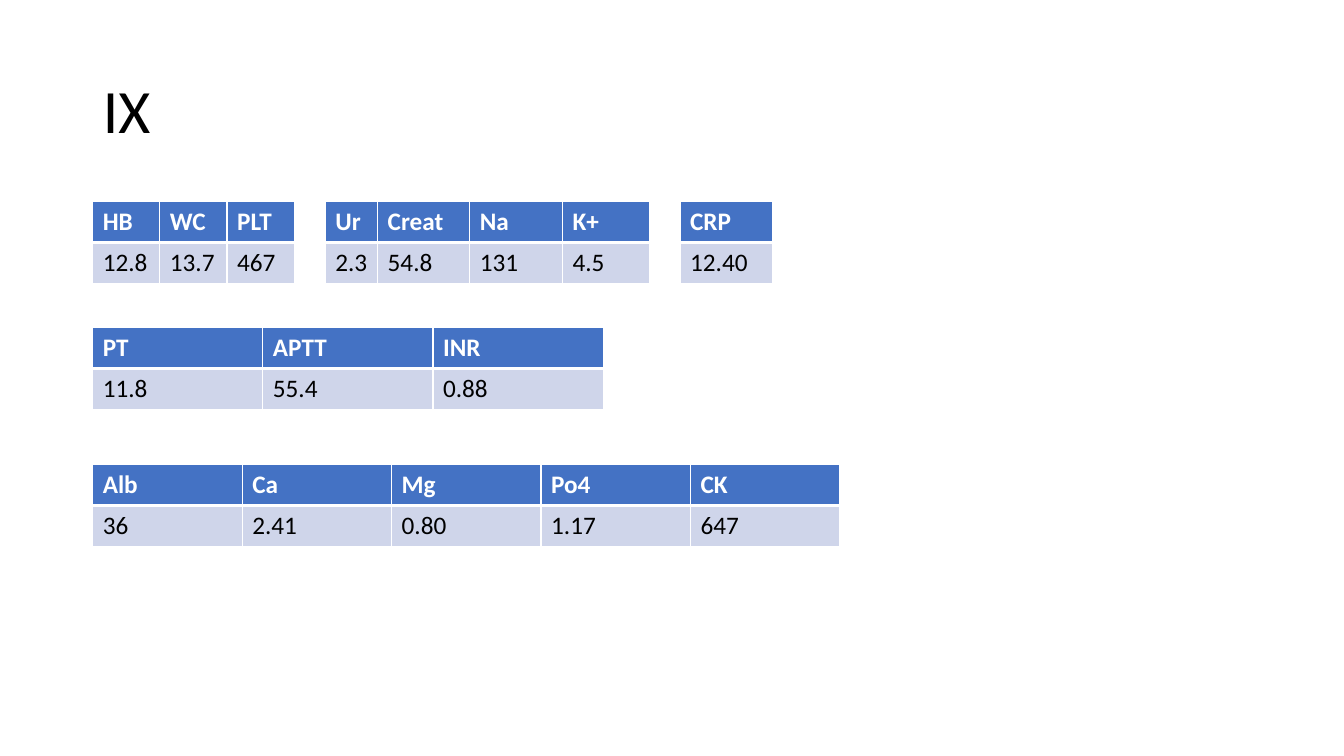
import dataclasses

import lxml.etree
import pptx
import pptx.dml.color
import pptx.enum.text
import pptx.oxml.ns
import pptx.presentation
import pptx.slide
import pptx.table
import pptx.text.text
import pptx.util

COLORS = {"header": "4472C4", "result": "CFD5EA", "light": "FFFFFF", "dark": "000000"}
SLIDE_WIDTH = pptx.util.Inches(13.33)
SLIDE_HEIGHT = pptx.util.Inches(7.5)
LEFT_MARGIN = 6.9
PANEL_GAP = 2.3
ROW_HEIGHT = 5.4

TITLE_BOX = {"left": LEFT_MARGIN, "top": 5.33, "width": 86.25, "height": 19.33}
TITLE_FONT = {"name": "Calibri", "size": pptx.util.Pt(44), "bold": False}
HEADER_FONT = {"name": "Calibri", "size": pptx.util.Pt(18), "bold": True}
RESULT_FONT = {**HEADER_FONT, "bold": False}
TITLE_FRAME = {
    "vertical_anchor": pptx.enum.text.MSO_ANCHOR.MIDDLE,
    "auto_size": pptx.enum.text.MSO_AUTO_SIZE.NONE,
    "word_wrap": True,
}
TITLE_PARAGRAPH = {"alignment": pptx.enum.text.PP_ALIGN.LEFT, "line_spacing": 0.9}


@dataclasses.dataclass(frozen=True)
class BloodTest:
    label: str
    result: str
    width: float


@dataclasses.dataclass(frozen=True)
class Band:
    top: float
    panels: tuple[tuple[BloodTest, ...], ...]


def even_panel(width: float, *results: tuple[str, str]) -> tuple[BloodTest, ...]:
    return tuple(BloodTest(label, result, width) for label, result in results)


BLOOD_COUNT = even_panel(5, ("HB", "12.8"), ("WC", "13.7"), ("PLT", "467"))
RENAL = (
    BloodTest("Ur", "2.3", 3.9),
    BloodTest("Creat", "54.8", 6.85),
    BloodTest("Na", "131", 6.9),
    BloodTest("K+", "4.5", 6.45),
)
INFLAMMATION = even_panel(6.9, ("CRP", "12.40"))
CLOTTING = even_panel(12.66, ("PT", "11.8"), ("APTT", "55.4"), ("INR", "0.88"))
MINERALS = even_panel(
    11.12, ("Alb", "36"), ("Ca", "2.41"), ("Mg", "0.80"), ("Po4", "1.17"), ("CK", "647")
)
BANDS = (
    Band(26.67, (BLOOD_COUNT, RENAL, INFLAMMATION)),
    Band(43.33, (CLOTTING,)),
    Band(61.47, (MINERALS,)),
)


def across(percent: float) -> pptx.util.Emu:
    return pptx.util.Emu(round(SLIDE_WIDTH * percent / 100))


def down(percent: float) -> pptx.util.Emu:
    return pptx.util.Emu(round(SLIDE_HEIGHT * percent / 100))


def apply_format(target: object, values: dict[str, object]) -> None:
    for attribute, value in values.items():
        setattr(target, attribute, value)


def rgb(color: str) -> pptx.dml.color.RGBColor:
    return pptx.dml.color.RGBColor.from_string(COLORS[color])


def write(
    paragraph: pptx.text.text._Paragraph, text: str, font: dict[str, object], color: str
) -> None:
    run = paragraph.add_run()
    run.text = text
    apply_format(run.font, font)
    run.font.color.rgb = rgb(color)


def add_borders(cell: pptx.table._Cell, top: float, bottom: float) -> None:
    properties = cell._tc.get_or_add_tcPr()
    edges = {"lnL": 1, "lnR": 1, "lnT": top, "lnB": bottom}
    for position, (edge, points) in enumerate(edges.items()):
        line = lxml.etree.Element(
            pptx.oxml.ns.qn(f"a:{edge}"), w=str(pptx.util.Pt(points))
        )
        fill = lxml.etree.SubElement(line, pptx.oxml.ns.qn("a:solidFill"))
        lxml.etree.SubElement(fill, pptx.oxml.ns.qn("a:srgbClr"), val=COLORS["light"])
        properties.insert(position, line)


def fill_cell(cell: pptx.table._Cell, text: str, is_header: bool) -> None:
    cell.fill.solid()
    cell.fill.fore_color.rgb = rgb("header" if is_header else "result")
    font = HEADER_FONT if is_header else RESULT_FONT
    write(cell.text_frame.paragraphs[0], text, font, "light" if is_header else "dark")
    add_borders(cell, top=1 if is_header else 3, bottom=3 if is_header else 1)


def draw_panel(
    slide: pptx.slide.Slide, panel: tuple[BloodTest, ...], left: float, top: float
) -> float:
    width = sum(test.width for test in panel)
    table = slide.shapes.add_table(
        2, len(panel), across(left), down(top), across(width), down(2 * ROW_HEIGHT)
    ).table
    for index, test in enumerate(panel):
        table.columns[index].width = across(test.width)
        fill_cell(table.cell(0, index), test.label, True)
        fill_cell(table.cell(1, index), test.result, False)
    return left + width


def draw_title(slide: pptx.slide.Slide, text: str) -> None:
    title = slide.shapes.title
    scales = {"left": across, "top": down, "width": across, "height": down}
    apply_format(title, {side: scales[side](share) for side, share in TITLE_BOX.items()})
    apply_format(title.text_frame, TITLE_FRAME)
    heading = title.text_frame.paragraphs[0]
    apply_format(heading, TITLE_PARAGRAPH)
    write(heading, text, TITLE_FONT, "dark")


def main() -> None:
    presentation = pptx.Presentation()
    apply_format(
        presentation, {"slide_width": SLIDE_WIDTH, "slide_height": SLIDE_HEIGHT}
    )
    slide = presentation.slides.add_slide(presentation.slide_layouts[5])
    draw_title(slide, "IX")
    for band in BANDS:
        left = LEFT_MARGIN
        for panel in band.panels:
            left = draw_panel(slide, panel, left, band.top) + PANEL_GAP
    presentation.save("out.pptx")


if __name__ == "__main__":
    main()
